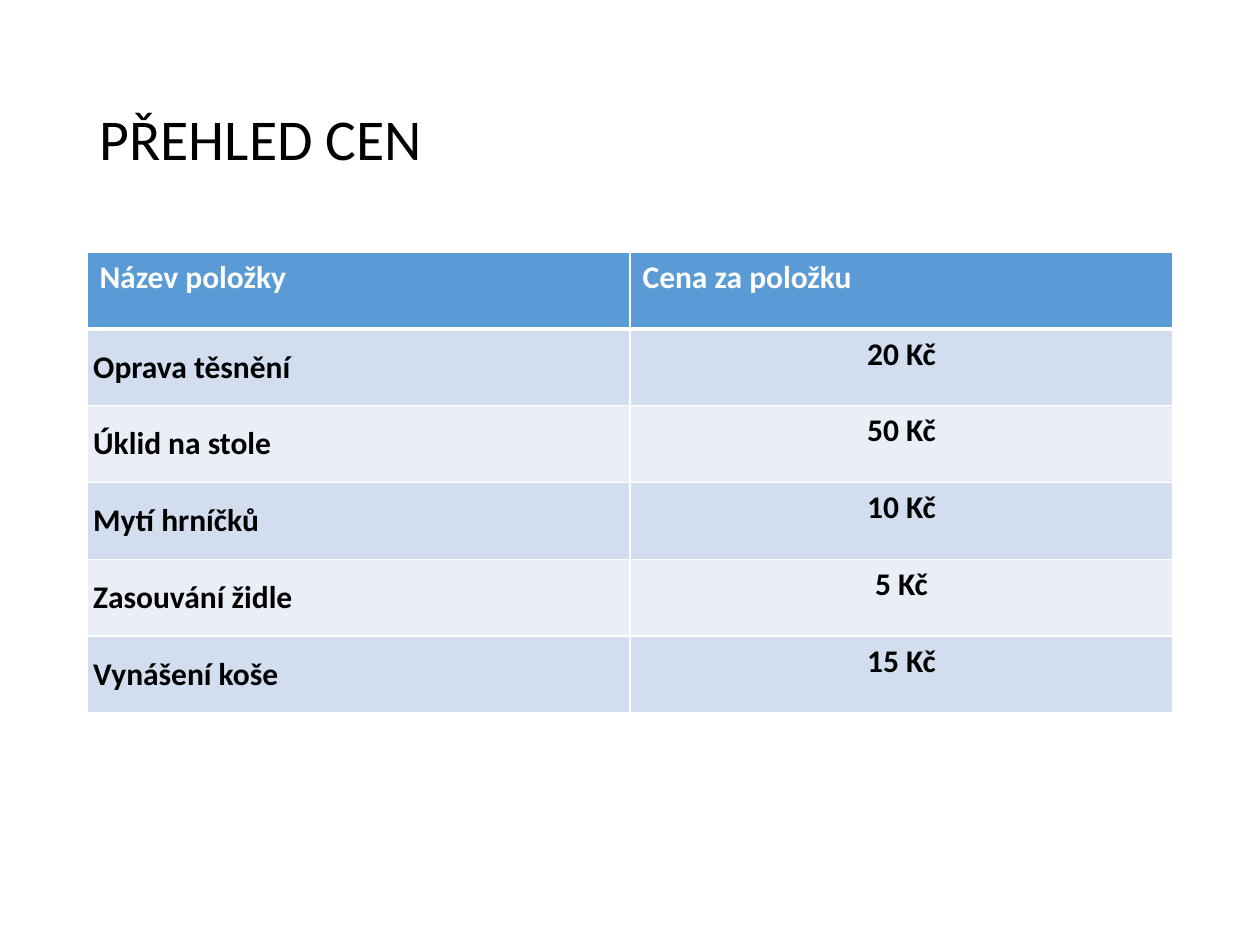
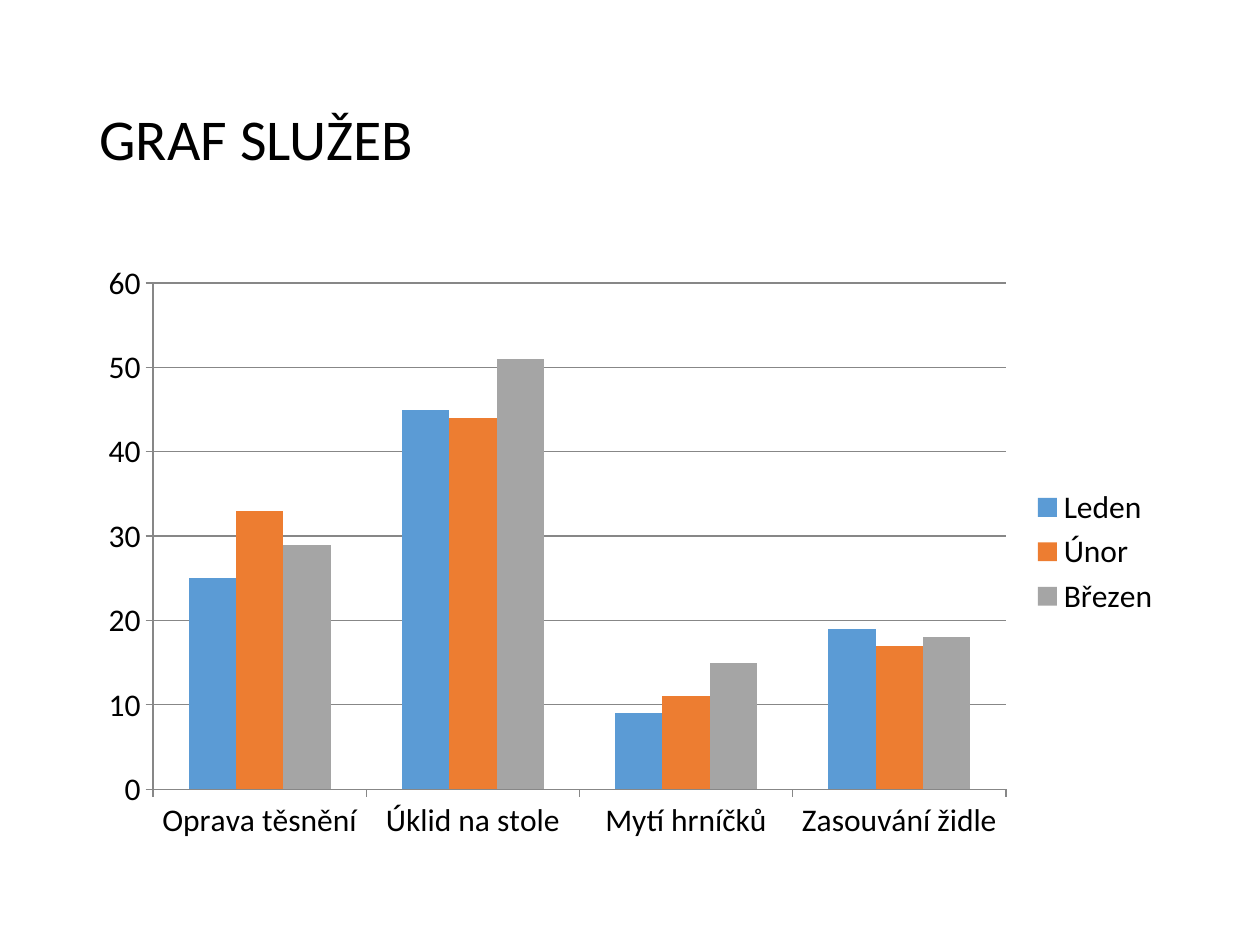
import lxml.etree
import pptx
import pptx.chart.data
import pptx.dml.color
import pptx.enum.chart
import pptx.enum.text
import pptx.oxml.ns
import pptx.util

RGBColor = pptx.dml.color.RGBColor
BLACK = RGBColor(0x00, 0x00, 0x00)
WHITE = RGBColor(0xFF, 0xFF, 0xFF)
GRAY = RGBColor(0xA5, 0xA5, 0xA5)
BLUE = RGBColor(0x5B, 0x9B, 0xD5)
ORANGE = RGBColor(0xED, 0x7D, 0x31)
AXIS_GRAY = RGBColor(0x87, 0x87, 0x87)
ROW_FILLS = (RGBColor(0xEA, 0xEF, 0xF7), RGBColor(0xD2, 0xDE, 0xEF))

FONT = "Calibri"
TITLE_SIZE = pptx.util.Pt(33)
BODY_SIZE = pptx.util.Pt(18)

SLIDE_WIDTH = pptx.util.Inches(10)
SLIDE_HEIGHT = pptx.util.Inches(7.5)
COLUMN = SLIDE_WIDTH / 29
ROW = SLIDE_HEIGHT / 75

PRICES = [
    ("Název položky", "Cena za položku"),
    ("Oprava těsnění", "20 Kč"),
    ("Úklid na stole", "50 Kč"),
    ("Mytí hrníčků", "10 Kč"),
    ("Zasouvání židle", "5 Kč"),
    ("Vynášení koše", "15 Kč"),
]
SERVICES = [name for name, price in PRICES[1:5]]
MONTHS = [
    ("Leden", (25, 45, 9, 19), BLUE),
    ("Únor", (33, 44, 11, 17), ORANGE),
    ("Březen", (29, 51, 15, 18), GRAY),
]


def content_box(top, height):
    """Return the box between the side margins, from rows of the grid."""
    return [round(length) for length in (2 * COLUMN, top * ROW, 25 * COLUMN, height * ROW)]


def style_font(font, size, color, bold=False):
    """Apply the shared font with a size, colour and weight."""
    font.name = FONT
    font.size = size
    font.bold = bold
    font.color.rgb = color


def add_titled_slide(presentation, title):
    """Add a slide with a left-aligned title."""
    slide = presentation.slides.add_slide(presentation.slide_layouts[5])
    shape = slide.shapes.title
    shape.left, shape.top, shape.width, shape.height = content_box(4, 14.5)
    shape.text_frame.vertical_anchor = pptx.enum.text.MSO_ANCHOR.MIDDLE
    paragraph = shape.text_frame.paragraphs[0]
    paragraph.alignment = pptx.enum.text.PP_ALIGN.LEFT
    paragraph.line_spacing = 0.9
    run = paragraph.add_run()
    run.text = title
    style_font(run.font, TITLE_SIZE, BLACK)
    return slide


def set_border(cell, side, width):
    """Draw one white cell border of a width in points."""
    properties = cell._tc.get_or_add_tcPr()
    qualify = pptx.oxml.ns.qn
    line = lxml.etree.SubElement(properties, qualify(f"a:ln{side}"), w=str(pptx.util.Pt(width)))
    fill = lxml.etree.SubElement(line, qualify("a:solidFill"))
    lxml.etree.SubElement(fill, qualify("a:srgbClr"), val=str(WHITE))


def fill_price_cell(cell, text, row, column):
    """Write and format one cell according to its row and column."""
    header = row == 0
    for side in "LRTB":
        thick = (side == "B" and header) or (side == "T" and row == 1)
        set_border(cell, side, 3 if thick else 1)
    cell.fill.solid()
    cell.fill.fore_color.rgb = BLUE if header else ROW_FILLS[row % 2]
    paragraph = cell.text_frame.paragraphs[0]
    run = paragraph.add_run()
    run.text = text
    style_font(run.font, BODY_SIZE, WHITE if header else BLACK, True)
    if header:
        return
    if column == 0:
        cell.vertical_anchor = pptx.enum.text.MSO_ANCHOR.MIDDLE
        cell.margin_left = cell.margin_right = pptx.util.Inches(0.05)
        cell.margin_top = cell.margin_bottom = 0
        paragraph.space_before = paragraph.space_after = pptx.util.Pt(6)
    else:
        paragraph.alignment = pptx.enum.text.PP_ALIGN.CENTER


def add_price_table(slide, box):
    """Add the price list with equal rows and columns."""
    table = slide.shapes.add_table(len(PRICES), len(PRICES[0]), *box).table
    for row, texts in enumerate(PRICES):
        for column, text in enumerate(texts):
            fill_price_cell(table.cell(row, column), text, row, column)


def add_service_chart(slide, box):
    """Add the clustered columns of services by month."""
    data = pptx.chart.data.CategoryChartData()
    data.categories = SERVICES
    for month, counts, color in MONTHS:
        data.add_series(month, counts)
    chart_type = pptx.enum.chart.XL_CHART_TYPE.COLUMN_CLUSTERED
    chart = slide.shapes.add_chart(chart_type, *box, data).chart
    style_font(chart.font, BODY_SIZE, BLACK)
    chart.has_title = False
    chart.has_legend = True
    chart.legend.position = pptx.enum.chart.XL_LEGEND_POSITION.RIGHT
    chart.legend.include_in_layout = False

    plot = chart.plots[0]
    plot.vary_by_categories = False
    plot.gap_width = 150
    plot.overlap = 0
    for series, (month, counts, color) in zip(plot.series, MONTHS):
        series.format.fill.solid()
        series.format.fill.fore_color.rgb = color

    chart.value_axis.has_major_gridlines = True
    for axis in (chart.category_axis, chart.value_axis):
        axis.major_tick_mark = pptx.enum.chart.XL_TICK_MARK.OUTSIDE
        axis.minor_tick_mark = pptx.enum.chart.XL_TICK_MARK.NONE
    for lines in (chart.category_axis, chart.value_axis, chart.value_axis.major_gridlines):
        lines.format.line.color.rgb = AXIS_GRAY
        lines.format.line.width = pptx.util.Pt(0.75)
    chart.value_axis.minimum_scale = 0
    chart.value_axis.maximum_scale = 60
    chart.value_axis.major_unit = 10


def main():
    """Build and save the presentation."""
    presentation = pptx.Presentation()
    presentation.slide_width = SLIDE_WIDTH
    presentation.slide_height = SLIDE_HEIGHT
    add_price_table(add_titled_slide(presentation, "PŘEHLED CEN"), content_box(20, 36.6))
    add_service_chart(add_titled_slide(presentation, "GRAF SLUŽEB"), content_box(20, 47.6))
    presentation.save("out.pptx")


if __name__ == "__main__":
    main()
